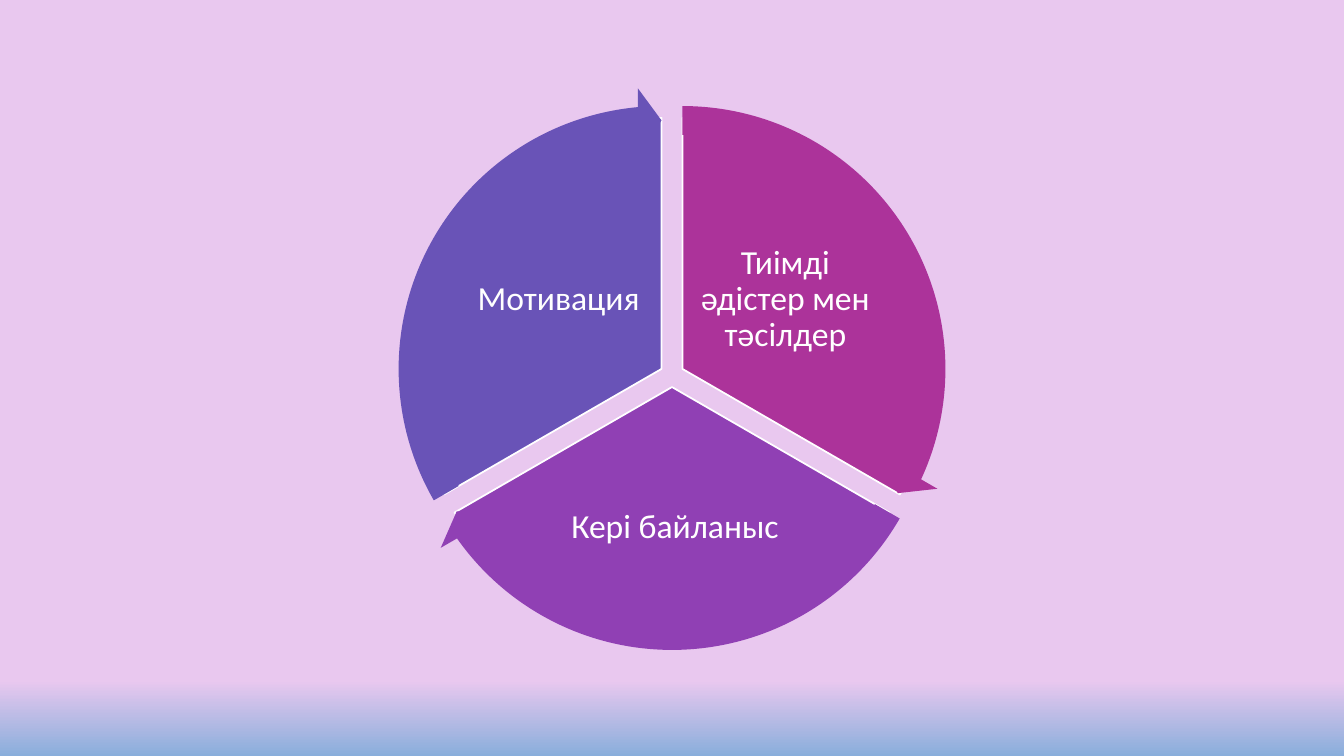
import math

from pptx import Presentation
from pptx.dml.color import RGBColor
from pptx.enum.shapes import MSO_SHAPE
from pptx.enum.text import MSO_ANCHOR, PP_ALIGN
from pptx.util import Inches, Pt

PIE, ARROW = MSO_SHAPE.PIE, MSO_SHAPE.CIRCULAR_ARROW
MIDDLE, CENTER = MSO_ANCHOR.MIDDLE, PP_ALIGN.CENTER

COLORS = {
    "white": "FFFFFF", "pink": "E9C8EF", "blue": "89AEDB",
    "magenta": "AC339A", "purple": "9040B4", "violet": "6953B7",
}
# label, colour, start angle in degrees, label box (left, top, width, height)
SECTORS = [
    ("Тиімді әдістер мен тәсілдер", "magenta", 270, (6.9, 2.23, 1.78, 1.48)),
    ("Кері байланыс", "purple", 30, (5.36, 4.58, 2.67, 1.3)),
    ("Мотивация", "violet", 150, (4.65, 2.23, 1.78, 1.48)),
]
BACKGROUND = [(0.9, "pink"), (1.0, "blue")]
WIDTH, HEIGHT = 13.33, 7.5
CENTER_X, CENTER_Y = WIDTH / 2, 3.72
SWEEP = 360 / len(SECTORS)
PIE_SIZE, ARROW_SIZE, PULL_OUT = 4.98, 5.59, 0.12
DEGREE = 0.6  # one degree in adjustment units
ARROW_BAND, ARROW_HEAD, HEAD_ANGLE = 0.051, 0.059, 3.275
LABEL_FONT = {"name": "Calibri", "size": Pt(24)}
LABEL_FRAME = {"word_wrap": True, "vertical_anchor": MIDDLE}
LABEL_FRAME.update({f"margin_{side}": Inches(0.03)
                    for side in ("left", "top", "right", "bottom")})


def rgb(name):
    return RGBColor.from_string(COLORS[name])


def apply(target, values):
    for name, value in values.items():
        setattr(target, name, value)


def add_round(slide, kind, start, size, color, adjustments):
    """Add a round shape pulled out from the centre along its sector's bisector."""
    middle = math.radians(start + SWEEP / 2)
    left = CENTER_X + PULL_OUT * math.cos(middle) - size / 2
    top = CENTER_Y + PULL_OUT * math.sin(middle) - size / 2
    sp = slide.shapes.add_shape(kind, *map(Inches, (left, top, size, size)))
    sp.shadow.inherit = False
    for i, value in enumerate(adjustments):
        sp.adjustments[i] = value
    sp.fill.solid()
    sp.fill.fore_color.rgb = rgb(color)
    return sp


def add_label(slide, text, box):
    tf = slide.shapes.add_textbox(*map(Inches, box)).text_frame
    apply(tf, LABEL_FRAME)
    p = tf.paragraphs[0]
    apply(p, {"alignment": CENTER, "line_spacing": 0.9})
    r = p.add_run()
    r.text = text
    apply(r.font, LABEL_FONT)
    r.font.color.rgb = rgb("white")


def main():
    prs = Presentation()
    prs.slide_width, prs.slide_height = Inches(WIDTH), Inches(HEIGHT)
    slide = prs.slides.add_slide(prs.slide_layouts[6])

    fill = slide.background.fill
    fill.gradient()
    fill.gradient_angle = 270
    for stop, (position, color) in zip(fill.gradient_stops, BACKGROUND):
        stop.position = position
        stop.color.rgb = rgb(color)

    for text, color, start, box in SECTORS:
        end = (start + SWEEP) % 360
        pie = add_round(slide, PIE, start, PIE_SIZE, color,
                        (start * DEGREE, end * DEGREE))
        pie.line.color.rgb = rgb("white")
        pie.line.width = Pt(1.25)
        add_label(slide, text, box)

    for _, color, start, _ in SECTORS:
        end = (start + SWEEP) % 360
        arrow = add_round(slide, ARROW, start, ARROW_SIZE, color,
                          (ARROW_BAND, HEAD_ANGLE, end * DEGREE - HEAD_ANGLE,
                           start * DEGREE, ARROW_HEAD))
        arrow.line.fill.background()

    prs.save("out.pptx")


if __name__ == "__main__":
    main()
